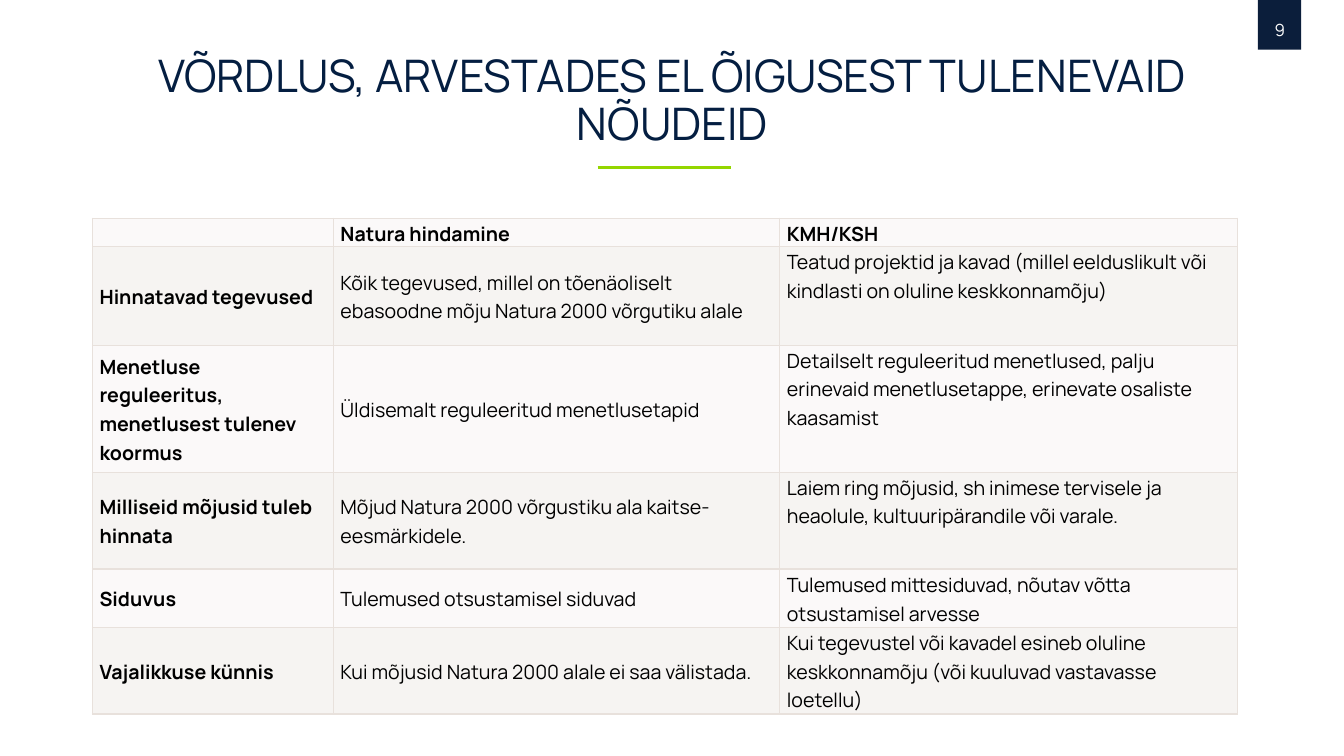
import pptx
import pptx.dml.color
import pptx.enum.shapes
import pptx.enum.text
import pptx.oxml
import pptx.oxml.ns
import pptx.util
from lxml import etree

Cm = pptx.util.Cm
Pt = pptx.util.Pt
ANCHOR = pptx.enum.text.MSO_ANCHOR
CENTER = pptx.enum.text.PP_ALIGN.CENTER

theme = {
    "font": "Manrope",
    "navy": "041E41",
    "tab": "0B1E3B",
    "green": "94D600",
    "white": "FFFFFF",
    "black": "000000",
    "border": "E8E1DC",
    "bands": ["FBF9F9", "F6F4F2"],
    "title_size": 32,
    "number_size": 12,
    "table_size": 14,
}


def color(name):
    return pptx.dml.color.RGBColor.from_string(theme.get(name, name))


def write(para, text, size, ink, bold=False):
    span = para.add_run()
    span.text = text
    span.font.name = theme["font"]
    span.font.size = Pt(theme[size])
    span.font.color.rgb = color(ink)
    span.font.bold = bold


deck = pptx.Presentation()
deck.slide_width = Cm(33.87)
deck.slide_height = Cm(19.05)
page = deck.slides.add_slide(deck.slide_layouts[6])

number_tab = page.shapes.add_shape(
    pptx.enum.shapes.MSO_SHAPE.RECTANGLE, Cm(31.7), Cm(-0.02), Cm(1.09), Cm(1.27))
number_tab.shadow.inherit = False
number_tab.fill.solid()
number_tab.fill.fore_color.rgb = color("tab")
number_tab.line.fill.background()

number_box = page.shapes.add_textbox(Cm(31.47), Cm(0.38), Cm(1.57), Cm(0.86))
number_box.text_frame.word_wrap = True
para = number_box.text_frame.paragraphs[0]
para.alignment = CENTER
write(para, "9", "number_size", "white")

title_box = page.shapes.add_textbox(Cm(3.18), Cm(0.41), Cm(27.53), Cm(4.32))
title_box.text_frame.word_wrap = True
title_box.text_frame.vertical_anchor = ANCHOR.MIDDLE
para = title_box.text_frame.paragraphs[0]
para.alignment = CENTER
para.line_spacing = 0.9
write(para, "VÕRDLUS, ARVESTADES EL ÕIGUSEST TULENEVAID NÕUDEID", "title_size", "navy")

title_rule = page.shapes.add_connector(
    pptx.enum.shapes.MSO_CONNECTOR.STRAIGHT, Cm(15.06), Cm(4.22), Cm(18.42), Cm(4.22))
title_rule.line.color.rgb = color("green")
title_rule.line.width = Pt(2.25)
etree.SubElement(title_rule._element.spPr, pptx.oxml.ns.qn("a:effectLst"))

column_widths = [6.07, 11.25, 11.53]
row_heights = [0.72, 2.48, 3.2, 2.44, 1.47, 2.18]
top_anchored_rows = [1, 2, 3]
rows = [
    ["", "Natura hindamine", "KMH/KSH"],
    ["Hinnatavad tegevused",
     "Kõik tegevused, millel on tõenäoliselt ebasoodne mõju Natura 2000 võrgutiku alale",
     "Teatud projektid ja kavad (millel eelduslikult või kindlasti on oluline keskkonnamõju)"],
    ["Menetluse reguleeritus, menetlusest tulenev koormus",
     "Üldisemalt reguleeritud menetlusetapid",
     "Detailselt reguleeritud menetlused, palju erinevaid menetlusetappe, "
     "erinevate osaliste kaasamist"],
    ["Milliseid mõjusid tuleb hinnata",
     "Mõjud Natura 2000 võrgustiku ala kaitse-eesmärkidele.",
     "Laiem ring mõjusid, sh inimese tervisele ja heaolule, kultuuripärandile või varale."],
    ["Siduvus",
     "Tulemused otsustamisel siduvad",
     "Tulemused mittesiduvad, nõutav võtta otsustamisel arvesse"],
    ["Vajalikkuse künnis",
     "Kui mõjusid Natura 2000 alale ei saa välistada.",
     "Kui tegevustel või kavadel esineb oluline keskkonnamõju "
     "(või kuuluvad vastavasse loetellu)"],
]

table = page.shapes.add_table(
    len(rows), len(column_widths), Cm(2.33), Cm(5.5),
    Cm(sum(column_widths)), Cm(sum(row_heights))).table
for column, width in zip(table.columns, column_widths):
    column.width = Cm(width)
for table_row, height in zip(table.rows, row_heights):
    table_row.height = Cm(height)

for row_index, texts in enumerate(rows):
    for column_index, text in enumerate(texts):
        cell = table.cell(row_index, column_index)
        cell.margin_left = cell.margin_right = Cm(0.18)
        cell.margin_top = cell.margin_bottom = 0
        at_top = column_index == 2 and row_index in top_anchored_rows
        cell.vertical_anchor = ANCHOR.TOP if at_top else ANCHOR.MIDDLE
        para = cell.text_frame.paragraphs[0]
        para.line_spacing = 1.07
        para.space_after = Pt(8)
        if text:
            write(para, text, "table_size", "black", row_index == 0 or column_index == 0)
        else:
            para.font.size = Pt(theme["table_size"])
        properties = cell._tc.get_or_add_tcPr()
        for side in ["lnL", "lnR", "lnT", "lnB"]:
            properties.append(pptx.oxml.parse_xml(
                f'<a:{side} {pptx.oxml.ns.nsdecls("a")} w="12700"><a:solidFill>'
                f'<a:srgbClr val="{theme["border"]}"/></a:solidFill></a:{side}>'))
        cell.fill.solid()
        cell.fill.fore_color.rgb = color(theme["bands"][row_index % 2])

deck.save("out.pptx")
